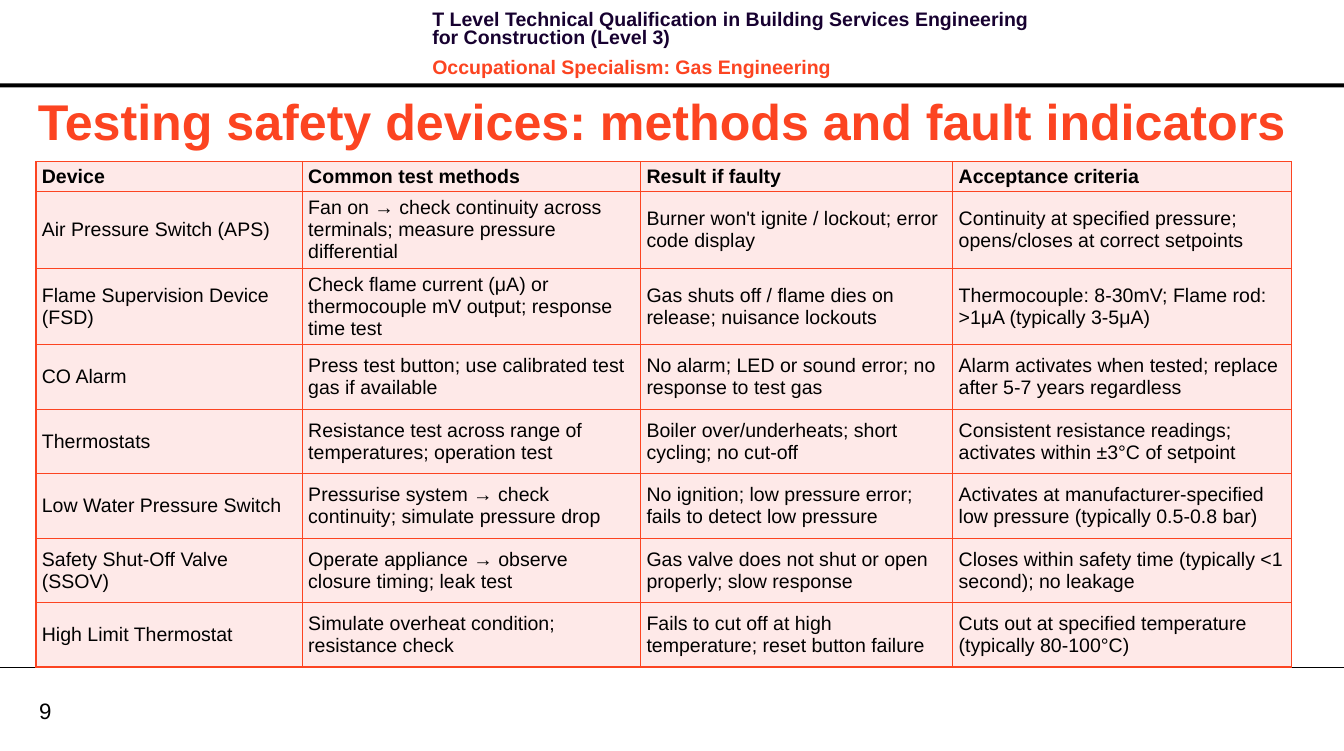
from dataclasses import dataclass

import pptx
import pptx.dml.color
import pptx.enum.shapes
import pptx.enum.text
import pptx.oxml
import pptx.oxml.ns
import pptx.util

Cm = pptx.util.Cm
Pt = pptx.util.Pt
MIDDLE = pptx.enum.text.MSO_ANCHOR.MIDDLE
TOP = pptx.enum.text.MSO_ANCHOR.TOP

COLOURS = {
    "black": "000000",
    "navy": "170130",
    "orange": "FC4421",
    "blush": "FEE9E8",
}
PAGE_WIDTH, PAGE_HEIGHT = 34.01, 19
COLUMN_WIDTHS = (6.74, 8.56, 7.9, 8.58)
HEADER_HEIGHT, ROW_HEIGHT = 0.66, 1.63
DEVICE_TESTS = [
    ("Device", "Common test methods", "Result if faulty", "Acceptance criteria"),
    ("Air Pressure Switch (APS)",
     "Fan on → check continuity across terminals; measure pressure differential",
     "Burner won't ignite / lockout; error code display",
     "Continuity at specified pressure; opens/closes at correct setpoints"),
    ("Flame Supervision Device (FSD)",
     "Check flame current (μA) or thermocouple mV output; response time test",
     "Gas shuts off / flame dies on release; nuisance lockouts",
     "Thermocouple: 8-30mV; Flame rod: >1μA (typically 3-5μA)"),
    ("CO Alarm",
     "Press test button; use calibrated test gas if available",
     "No alarm; LED or sound error; no response to test gas",
     "Alarm activates when tested; replace after 5-7 years regardless"),
    ("Thermostats",
     "Resistance test across range of temperatures; operation test",
     "Boiler over/underheats; short cycling; no cut-off",
     "Consistent resistance readings; activates within ±3°C of setpoint"),
    ("Low Water Pressure Switch",
     "Pressurise system → check continuity; simulate pressure drop",
     "No ignition; low pressure error; fails to detect low pressure",
     "Activates at manufacturer-specified low pressure (typically 0.5-0.8 bar)"),
    ("Safety Shut-Off Valve (SSOV)",
     "Operate appliance → observe closure timing; leak test",
     "Gas valve does not shut or open properly; slow response",
     "Closes within safety time (typically <1 second); no leakage"),
    ("High Limit Thermostat",
     "Simulate overheat condition; resistance check",
     "Fails to cut off at high temperature; reset button failure",
     "Cuts out at specified temperature (typically 80-100°C)"),
]


@dataclass
class Line:
    text: str
    size: int
    colour: str = "black"
    bold: bool = False


@dataclass
class TextBox:
    left: float
    top: float
    width: float
    height: float
    lines: list[Line]
    anchor: pptx.enum.text.MSO_ANCHOR = MIDDLE
    inset_x: float = 0.25
    inset_y: float = 0.13
    line_spacing: float | None = None
    gap: float = 0


TEXT_BOXES = [
    TextBox(0.99, 17.63, 1.63, 0.69, [Line("9", 16)], inset_x=0, inset_y=0),
    TextBox(10.69, 0.18, 16.18, 1.63, [
        Line("T Level Technical Qualification in Building Services Engineering "
             "for Construction (Level 3)", 14, "navy", True),
        Line("Occupational Specialism: Gas Engineering", 14, "orange", True),
    ], anchor=TOP, line_spacing=13.1, gap=4),
    TextBox(0.71, 2.16, 32.99, 1.8, [
        Line("Testing safety devices: methods and fault indicators",
             36, "orange", True),
    ]),
]


def rgb(name: str) -> pptx.dml.color.RGBColor:
    return pptx.dml.color.RGBColor.from_string(COLOURS[name])


def apply(target: object, values: dict[str, object]) -> None:
    for name, value in values.items():
        setattr(target, name, value)


def margins(x: float, y: float) -> dict[str, object]:
    return {"margin_left": Cm(x), "margin_right": Cm(x),
            "margin_top": Cm(y), "margin_bottom": Cm(y)}


def write_line(para, line: Line) -> None:
    span = para.add_run()
    span.text = line.text
    apply(span.font, {"name": "Arial", "size": Pt(line.size), "bold": line.bold})
    span.font.color.rgb = rgb(line.colour)


def draw_text_box(page, spec_box: TextBox) -> None:
    box = page.shapes.add_textbox(Cm(spec_box.left), Cm(spec_box.top),
                                  Cm(spec_box.width), Cm(spec_box.height))
    frame = box.text_frame
    apply(frame, {"word_wrap": True, "vertical_anchor": spec_box.anchor,
                  **margins(spec_box.inset_x, spec_box.inset_y)})
    for index, line in enumerate(spec_box.lines):
        para = frame.add_paragraph() if index else frame.paragraphs[0]
        if spec_box.line_spacing:
            para.line_spacing = Pt(spec_box.line_spacing)
        if index:
            para.space_before = Pt(spec_box.gap)
        para.space_after = Pt(spec_box.gap)
        write_line(para, line)


def draw_rules(page) -> None:
    """Draw the thick bar under the header and the thin footer line."""
    bar = page.shapes.add_shape(pptx.enum.shapes.MSO_SHAPE.RECTANGLE,
                                0, Cm(2.11), Cm(PAGE_WIDTH), Cm(0.1))
    bar.shadow.inherit = False
    bar.fill.solid()
    bar.fill.fore_color.rgb = rgb("black")
    bar.line.fill.background()

    footer = page.shapes.add_connector(pptx.enum.shapes.MSO_CONNECTOR.STRAIGHT,
                                       0, Cm(16.89), Cm(PAGE_WIDTH), Cm(16.89))
    footer.line.color.rgb = rgb("black")
    footer.line.width = Pt(0.75)
    footer._element.spPr.append(pptx.oxml.parse_xml(
        f'<a:effectLst {pptx.oxml.ns.nsdecls("a")}/>'))


def add_borders(cell) -> None:
    properties = cell._tc.get_or_add_tcPr()
    for side in "LRTB":
        properties.append(pptx.oxml.parse_xml(
            f'<a:ln{side} {pptx.oxml.ns.nsdecls("a")} w="{Pt(1)}"><a:solidFill>'
            f'<a:srgbClr val="{COLOURS["orange"]}"/></a:solidFill></a:ln{side}>'))


def draw_table(page) -> None:
    row_heights = [HEADER_HEIGHT] + [ROW_HEIGHT] * (len(DEVICE_TESTS) - 1)
    table = page.shapes.add_table(
        len(DEVICE_TESTS), len(COLUMN_WIDTHS), Cm(0.91), Cm(4.09),
        Cm(sum(COLUMN_WIDTHS)), Cm(sum(row_heights))).table
    apply(table, {"first_row": False, "horz_banding": False})
    for column, width in zip(table.columns, COLUMN_WIDTHS):
        column.width = Cm(width)
    for row_index, (height, texts) in enumerate(zip(row_heights, DEVICE_TESTS)):
        table.rows[row_index].height = Cm(height)
        for cell, text in zip(table.rows[row_index].cells, texts):
            apply(cell, {"vertical_anchor": MIDDLE, **margins(0.15, 0.08)})
            add_borders(cell)
            cell.fill.solid()
            cell.fill.fore_color.rgb = rgb("blush")
            write_line(cell.text_frame.paragraphs[0],
                       Line(text, 14, bold=row_index == 0))


def main() -> None:
    deck = pptx.Presentation()
    apply(deck, {"slide_width": Cm(PAGE_WIDTH), "slide_height": Cm(PAGE_HEIGHT)})
    page = deck.slides.add_slide(deck.slide_layouts[6])
    draw_rules(page)
    for text_box in TEXT_BOXES:
        draw_text_box(page, text_box)
    draw_table(page)
    deck.save("out.pptx")


if __name__ == "__main__":
    main()
